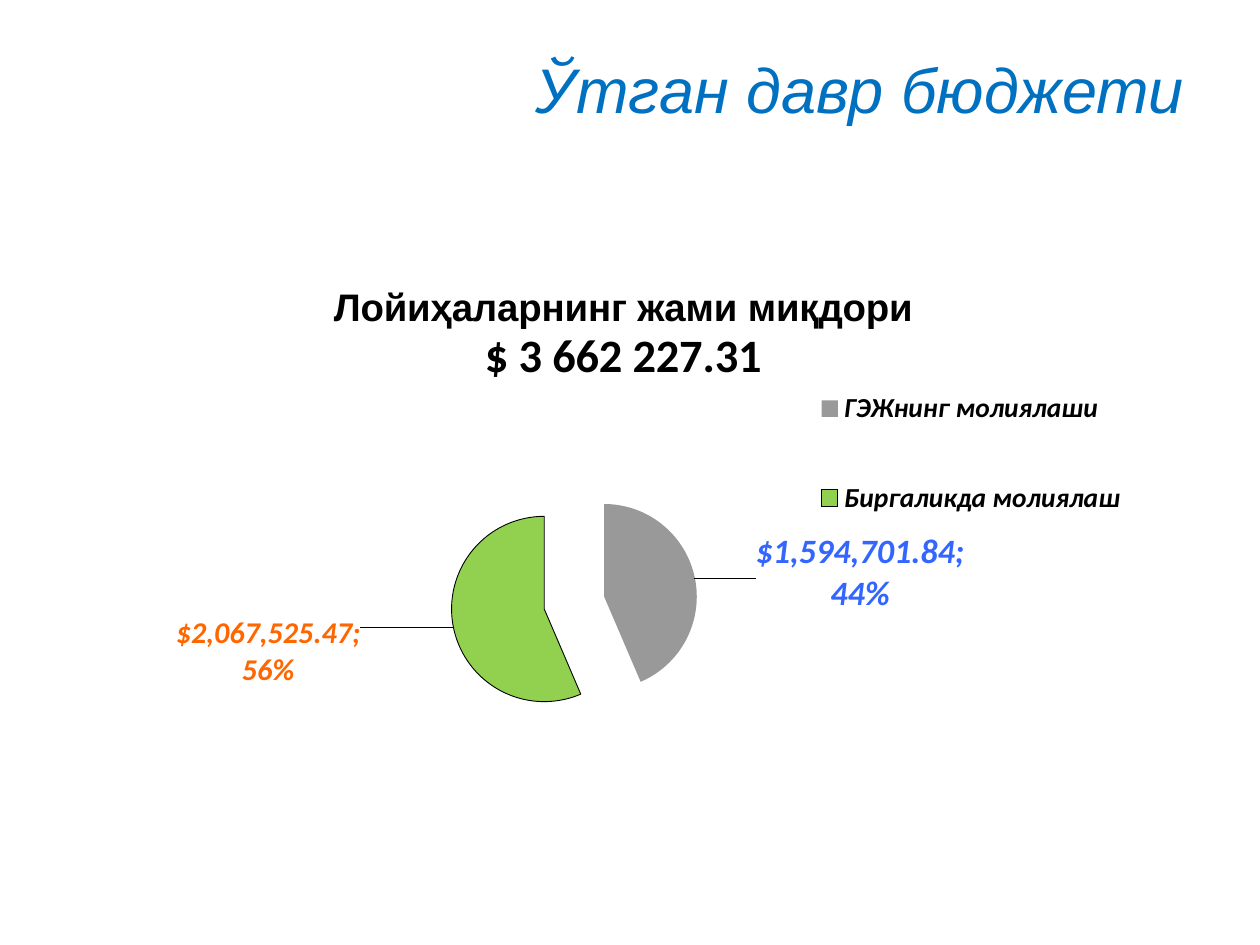
from lxml import etree
from pptx import Presentation
from pptx.chart.data import CategoryChartData
from pptx.dml.color import RGBColor
from pptx.enum import chart as ch, text
from pptx.oxml.ns import qn
from pptx.util import Cm, Pt

BLACK = "000000"
# category, amount, slice colour, outline, label colour, label size, label offset
SOURCES = [
    ("ГЭЖнинг молиялаши", 1594701.84, "999999", None, "3366FF", 19.5, (0.05, 0.08)),
    ("Биргаликда молиялаш", 2067525.47, "92D050", BLACK, "FF6600", 17.2, (-0.08, -0.03)),
]


def color(value):
    return RGBColor.from_string(value)


def style(font, size, fill=BLACK, name="Calibri", bold=False, italic=False):
    font.size, font.name = Pt(size), name
    font.bold, font.italic = bold, italic
    font.color.rgb = color(fill)


def write(paragraph, content, align, **font_format):
    paragraph.alignment = align
    run = paragraph.add_run()
    run.text = content
    style(run.font, **font_format)


def place(parent, after, **values):
    """Give a chart part a manual layout, placed behind its child `after`."""
    for old in parent.findall(qn("c:layout")):
        parent.remove(old)
    layout = etree.Element(qn("c:layout"))
    manual = etree.SubElement(layout, qn("c:manualLayout"))
    for key, value in values.items():
        etree.SubElement(manual, qn("c:" + key)).set("val", str(value))
    if after:
        parent.find(qn(after)).addnext(layout)
    else:
        parent.insert(0, layout)


def add_heading(slide):
    heading = slide.shapes.title
    heading.left, heading.top = Cm(4.88), Cm(0.2)
    heading.width, heading.height = Cm(19.25), Cm(3.18)
    heading.text_frame.vertical_anchor = text.MSO_ANCHOR.MIDDLE
    write(heading.text_frame.paragraphs[0], "Ўтган давр бюджети",
          text.PP_ALIGN.RIGHT, size=36, fill="0070C0", name="Arial", italic=True)


def format_slices(series):
    labels = series.data_labels
    labels.number_format, labels.number_format_is_linked = "0%", False
    labels.show_value = labels.show_percentage = True
    style(labels.font, 12.2)
    for index, (_, _, fill, outline, label_color, size, offset) in enumerate(SOURCES):
        point = series.points[index]
        point.format.fill.solid()
        point.format.fill.fore_color.rgb = color(fill)
        if outline:
            point.format.line.color.rgb = color(outline)
            point.format.line.width = Pt(0.5)
        else:
            point.format.line.fill.background()
        style(point.data_label.font, size, label_color, bold=True, italic=True)
        point.data_label.position = ch.XL_LABEL_POSITION.OUTSIDE_END

    # Amount and share in each label, moved away from its slice
    for label, source in zip(series._element.iter(qn("c:dLbl")), SOURCES):
        place(label, "c:idx", x=source[-1][0], y=source[-1][1])
        number_format = etree.Element(qn("c:numFmt"), formatCode="0%", sourceLinked="0")
        label.find(qn("c:layout")).addnext(number_format)
        label.find(qn("c:showPercent")).set("val", "1")
        etree.SubElement(label, qn("c:separator")).text = "; "

    # Pull the slices apart
    explosion = etree.Element(qn("c:explosion"), val="33")
    series._element.find(qn("c:dPt")).addprevious(explosion)


def add_budget_pie(slide):
    data = CategoryChartData(number_format='"$"#,##0.00')
    data.categories = [source[0] for source in SOURCES]
    data.add_series("Series 1", [source[1] for source in SOURCES])
    pie = slide.shapes.add_chart(ch.XL_CHART_TYPE.PIE, Cm(1.7), Cm(5.28),
                                 Cm(21.54), Cm(9.65), data).chart
    style(pie.font, 12.2)
    pie.plots[0].vary_by_categories = True
    format_slices(pie.plots[0].series[0])

    # Total above the pie
    total = pie.chart_title.text_frame
    center = text.PP_ALIGN.CENTER
    write(total.paragraphs[0], "Лойиҳаларнинг жами миқдори", center,
          size=21.9, name="Arial", bold=True)
    write(total.add_paragraph(), "$ 3 662 227.31", center, size=26.5, bold=True)
    pie.chart_title.include_in_layout = False

    # Legend
    pie.has_legend = True
    pie.legend.position = ch.XL_LEGEND_POSITION.RIGHT
    pie.legend.include_in_layout = False
    style(pie.legend.font, 15.7, bold=True, italic=True)

    # Places inside the chart
    edge = {"xMode": "edge", "yMode": "edge"}
    parts = pie.element.find(qn("c:chart"))
    place(parts.find(qn("c:title")), "c:tx", **edge, x=0.23, y=0.04)
    place(parts.find(qn("c:plotArea")), None, layoutTarget="inner", **edge,
          x=0.275, y=0.455, w=0.367, h=0.515)
    place(parts.find(qn("c:legend")), "c:legendPos", **edge,
          x=0.68, y=0.155, w=0.3, h=0.49)


def main():
    deck = Presentation()
    deck.slide_width, deck.slide_height = Cm(25.4), Cm(19.05)
    slide = deck.slides.add_slide(deck.slide_layouts[5])
    add_heading(slide)
    add_budget_pie(slide)
    deck.save("out.pptx")


if __name__ == "__main__":
    main()
